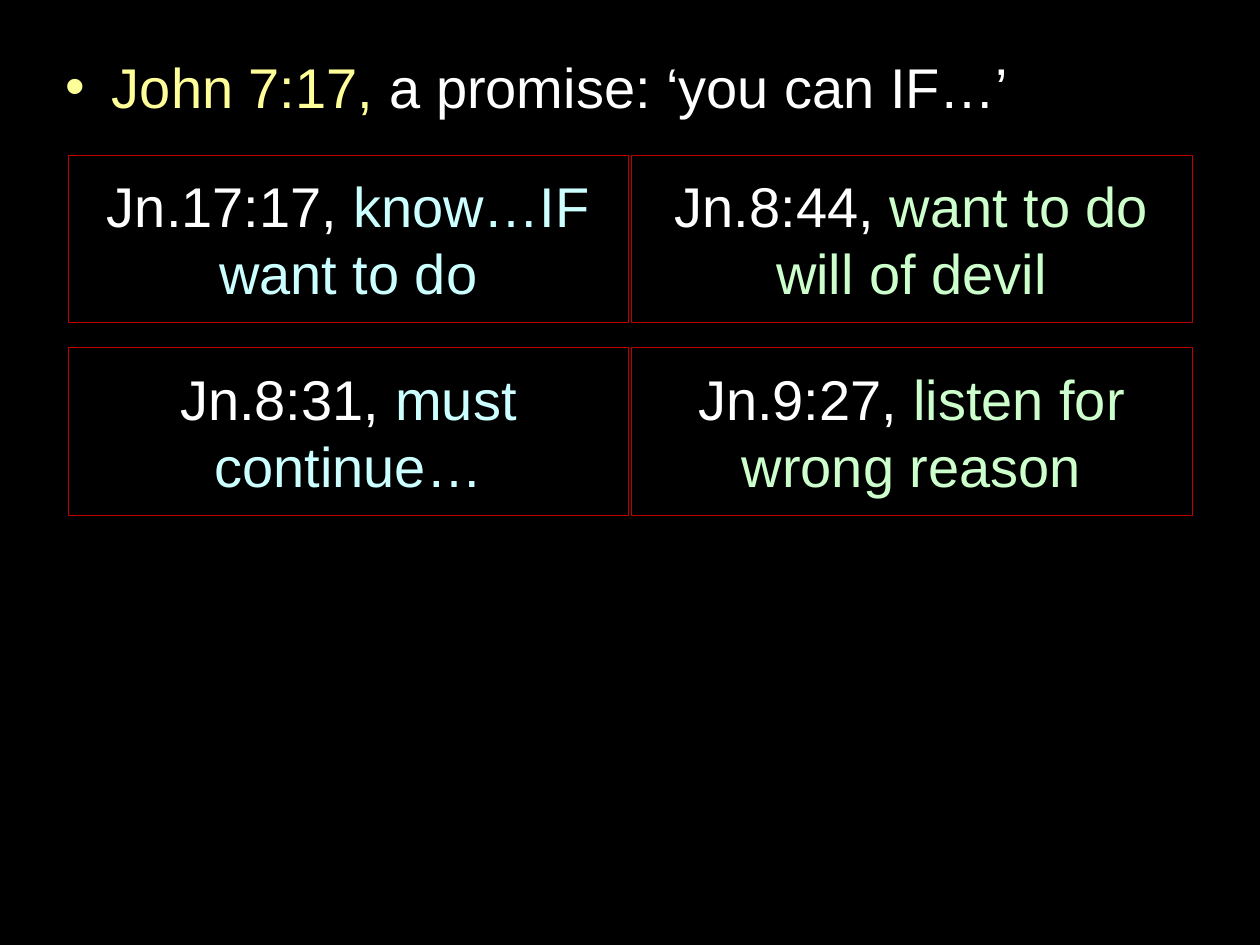
"""Build the slide on the promise of John 7:17 and its four supporting verses."""
from dataclasses import dataclass

from lxml import etree
from pptx import Presentation
from pptx.dml.color import RGBColor
from pptx.enum import shapes, text
from pptx.oxml import ns
from pptx.util import Inches, Pt

COLORS = {
    "black": "000000",
    "white": "FFFFFF",
    "yellow": "FFFF99",
    "cyan": "CCFFFF",
    "green": "CCFFCC",
    "red": "C00000",
}
LEFTS = (0.54, 5.01)
TOPS = (1.23, 2.76)
BOX_WIDTH, BOX_HEIGHT = 4.45, 1.33


@dataclass(frozen=True)
class Verse:
    row: int
    column: int
    reference: str
    message: str
    color: str


VERSES = (
    Verse(0, 0, "Jn.17:17, ", "know…IF want to do", "cyan"),
    Verse(0, 1, "Jn.8:44, ", "want to do will of devil", "green"),
    Verse(1, 0, "Jn.8:31, ", "must continue…", "cyan"),
    Verse(1, 1, "Jn.9:27, ", "listen for wrong reason", "green"),
)


def rgb(name: str) -> RGBColor:
    return RGBColor.from_string(COLORS[name])


def add_run(paragraph, words: str, color: str) -> None:
    run = paragraph.add_run()
    run.text = words
    run.font.name = "Arial"
    run.font.size = Pt(32)
    run.font.color.rgb = rgb(color)


def add_promise(slide) -> None:
    shape = slide.shapes.add_textbox(Inches(0.42), Inches(0.33), Inches(9.17), Inches(6.83))
    frame = shape.text_frame
    frame.word_wrap = True
    frame.margin_top = Inches(0.09)
    paragraph = frame.paragraphs[0]
    properties = paragraph._p.get_or_add_pPr()
    properties.set("marL", str(Inches(0.37)))
    properties.set("indent", str(Inches(-0.37)))
    etree.SubElement(properties, ns.qn("a:buFont"), typeface="Arial")
    etree.SubElement(properties, ns.qn("a:buChar"), char="•")
    paragraph.space_after = Pt(4)
    add_run(paragraph, "John 7:17, ", "yellow")
    add_run(paragraph, "a promise: ‘you can IF…’", "white")


def add_verse(slide, verse: Verse) -> None:
    shape = slide.shapes.add_shape(
        shapes.MSO_SHAPE.RECTANGLE,
        Inches(LEFTS[verse.column]),
        Inches(TOPS[verse.row]),
        Inches(BOX_WIDTH),
        Inches(BOX_HEIGHT),
    )
    shape.shadow.inherit = False
    shape.fill.solid()
    shape.fill.fore_color.rgb = rgb("black")
    shape.line.color.rgb = rgb("red")
    shape.line.width = Pt(0.25)
    frame = shape.text_frame
    frame.word_wrap = True
    frame.vertical_anchor = text.MSO_ANCHOR.MIDDLE
    paragraph = frame.paragraphs[0]
    paragraph.alignment = text.PP_ALIGN.CENTER
    add_run(paragraph, verse.reference, "white")
    add_run(paragraph, verse.message, verse.color)


def main() -> None:
    presentation = Presentation()
    presentation.slide_width = Inches(10)
    presentation.slide_height = Inches(7.5)
    slide = presentation.slides.add_slide(presentation.slide_layouts[6])
    slide.background.fill.solid()
    slide.background.fill.fore_color.rgb = rgb("black")
    add_promise(slide)
    for verse in VERSES:
        add_verse(slide, verse)
    presentation.save("out.pptx")


if __name__ == "__main__":
    main()
